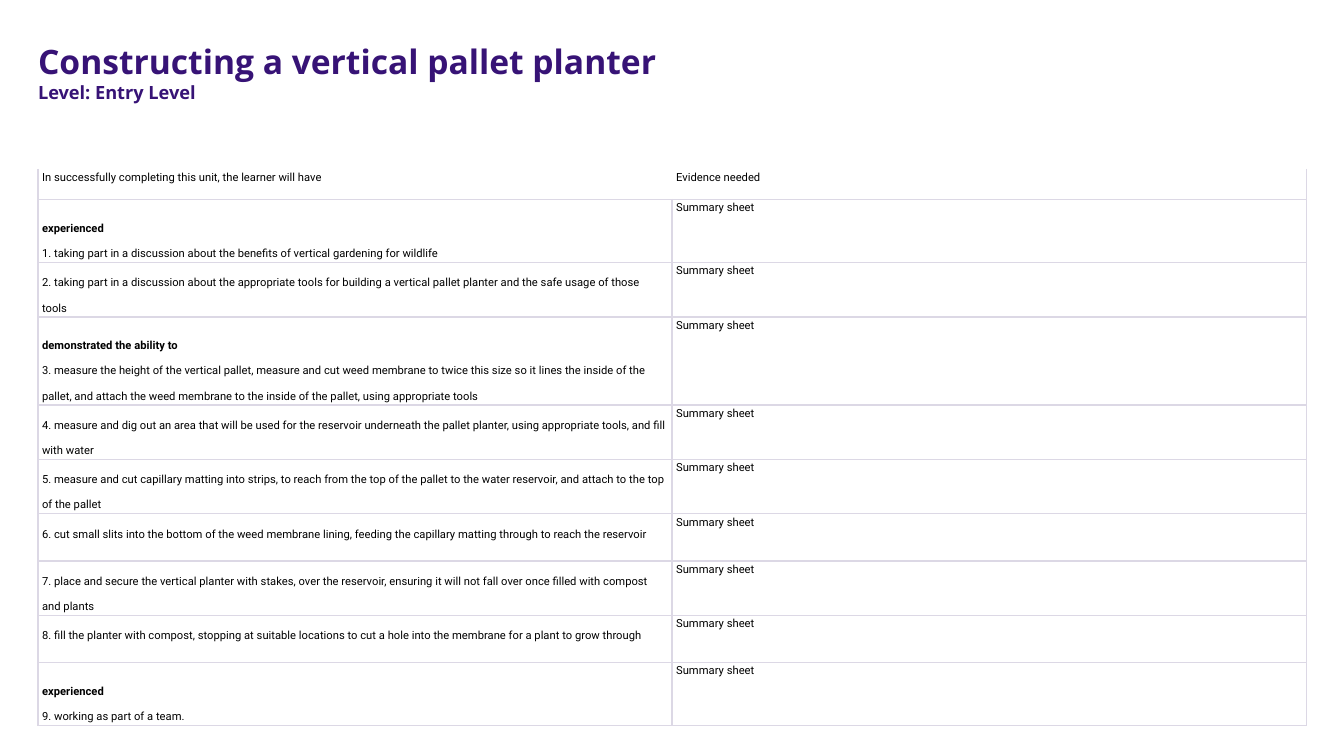
from lxml import etree
from pptx import Presentation
from pptx import util as u
from pptx.dml.color import RGBColor
from pptx.enum import text
from pptx.oxml import ns

COLORS = {"title": "371376", "body": "000000", "grid": "DCD8E5", "blank": "FFFFFF"}
LEFT = 0.96
COLUMN_WIDTH = 15.98
HEADER = ("In successfully completing this unit, the learner will have", "Evidence needed")
HEADER_HEIGHT = 0.76
EVIDENCE = "Summary sheet"

# Row height in cm, group heading, outcome
OUTCOMES = [
    (1.3, "experienced",
     "taking part in a discussion about the benefits of vertical gardening for wildlife"),
    (1.19, None,
     "taking part in a discussion about the appropriate tools for building a vertical "
     "pallet planter and the safe usage of those tools"),
    (2.11, "demonstrated the ability to",
     "measure the height of the vertical pallet, measure and cut weed membrane to twice "
     "this size so it lines the inside of the pallet, and attach the weed membrane to the "
     "inside of the pallet, using appropriate tools"),
    (1.19, None,
     "measure and dig out an area that will be used for the reservoir underneath the "
     "pallet planter, using appropriate tools, and fill with water"),
    (1.19, None,
     "measure and cut capillary matting into strips, to reach from the top of the pallet "
     "to the water reservoir, and attach to the top of the pallet"),
    (1.19, None,
     "cut small slits into the bottom of the weed membrane lining, feeding the capillary "
     "matting through to reach the reservoir"),
    (1.19, None,
     "place and secure the vertical planter with stakes, over the reservoir, ensuring it "
     "will not fall over once filled with compost and plants"),
    (1.19, None,
     "fill the planter with compost, stopping at suitable locations to cut a hole into "
     "the membrane for a plant to grow through"),
    (0.76, "experienced", "working as part of a team."),
]


class UnitSlide:
    def __init__(self, prs):
        self.s = prs.slides.add_slide(prs.slide_layouts[6])
        self.heading_font = "Open Sans"
        self.body_font = "Roboto"

    def set_lines(self, tf, lines, font, color):
        """Fill a text frame with (text, size, bold, exact line spacing) lines."""
        for i, (line, size, bold, spacing) in enumerate(lines):
            p = tf.paragraphs[0] if i == 0 else tf.add_paragraph()
            p.text = line
            p.font.name = font
            p.font.size = u.Pt(size)
            p.font.bold = bold
            p.font.color.rgb = RGBColor.from_string(COLORS[color])
            if spacing:
                p.line_spacing = u.Pt(spacing)

    def title(self, title, level):
        sp = self.s.shapes.add_textbox(u.Cm(LEFT), u.Cm(1.04), u.Cm(2 * COLUMN_WIDTH), u.Cm(1.78))
        tf = sp.text_frame
        tf.word_wrap = True
        tf.vertical_anchor = text.MSO_ANCHOR.TOP
        tf.margin_left = tf.margin_right = tf.margin_top = tf.margin_bottom = 0
        lines = [(title, 24, True, None), (level, 13, True, None)]
        self.set_lines(tf, lines, self.heading_font, "title")

    def borders(self, cell, blank_sides):
        tc_pr = cell._tc.get_or_add_tcPr()
        for side in "LRTB":
            blank = side in blank_sides
            ln = etree.SubElement(tc_pr, ns.qn(f"a:ln{side}"), w=str(u.Pt(1 if blank else 1.2)))
            fill = etree.SubElement(ln, ns.qn("a:solidFill"))
            etree.SubElement(fill, ns.qn("a:srgbClr"), val=COLORS["blank" if blank else "grid"])

    def cell(self, cell, lines, blank_sides=""):
        cell.margin_left = cell.margin_right = u.Cm(0.1)
        cell.margin_top = cell.margin_bottom = u.Cm(0.05)
        self.borders(cell, blank_sides)
        cell.fill.background()
        self.set_lines(cell.text_frame, lines, self.body_font, "body")

    def outcome_table(self, outcomes):
        heights = [HEADER_HEIGHT] + [height for height, _, _ in outcomes]
        table = self.s.shapes.add_table(
            len(heights), 2, u.Cm(LEFT), u.Cm(4.27),
            u.Cm(2 * COLUMN_WIDTH), u.Cm(sum(heights))).table
        table.first_row = table.horz_banding = False
        for column in table.columns:
            column.width = u.Cm(COLUMN_WIDTH)
        for row, height in zip(table.rows, heights):
            row.height = u.Cm(height)

        for col, (label, blank_sides) in enumerate(zip(HEADER, ("TR", "TL"))):
            self.cell(table.cell(0, col), [(label, 8, False, None)], blank_sides)
        for n, (_, group, outcome) in enumerate(outcomes, 1):
            lines = [(group, 8, True, 24)] if group else []
            lines.append((f"{n}. {outcome}", 8, False, 18))
            self.cell(table.cell(n, 0), lines)
            self.cell(table.cell(n, 1), [(EVIDENCE, 8, False, None)])


def main():
    prs = Presentation()
    prs.slide_width, prs.slide_height = u.Cm(33.87), u.Cm(19.05)
    slide = UnitSlide(prs)
    slide.outcome_table(OUTCOMES)
    slide.title("Constructing a vertical pallet planter", "Level: Entry Level")
    prs.save("out.pptx")


if __name__ == "__main__":
    main()
